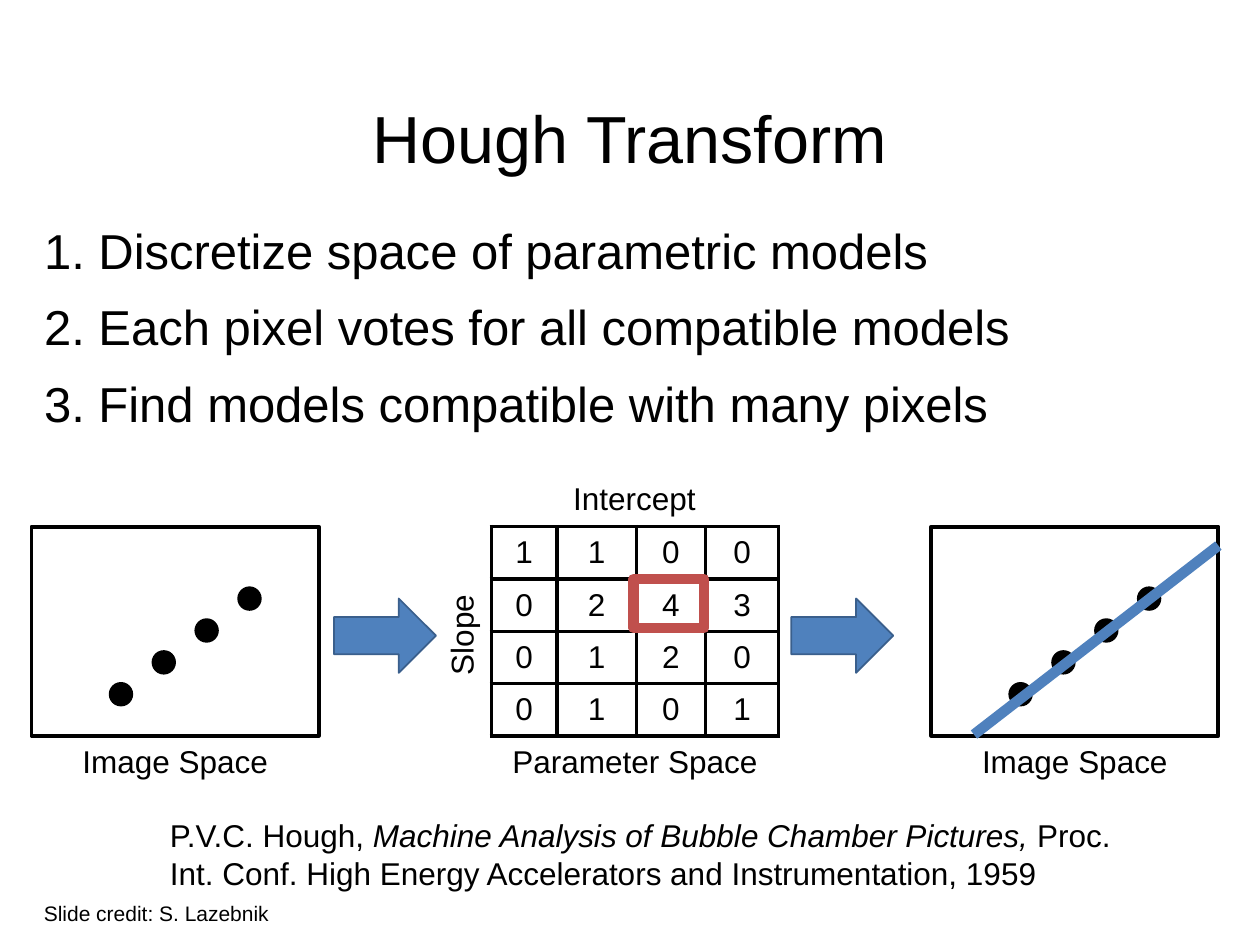
import pptx
import pptx.dml.color
import pptx.enum.shapes
import pptx.enum.text
import pptx.oxml
import pptx.oxml.ns
import pptx.util
from pptx.util import Inches

SHAPE = pptx.enum.shapes.MSO_SHAPE
ALIGN = pptx.enum.text.PP_ALIGN
ANCHOR = pptx.enum.text.MSO_ANCHOR
BLACK, WHITE, BLUE, DARK_BLUE, RED = "000000", "FFFFFF", "4F81BD", "3A5F8C", "C0504D"
PANEL_W, PANEL_H, PANEL_TOP = 2.28, 1.66, 4.18
VOTES = [[1, 1, 0, 0], [0, 2, 4, 3], [0, 1, 2, 0], [0, 1, 0, 1]]
COLUMN_WIDTHS = [0.52, 0.63, 0.55, 0.58]


def rgb(color):
    """Turn a hex string into a colour."""
    return pptx.dml.color.RGBColor.from_string(color)


def write(p, text, size=18, italic=False, align=ALIGN.LEFT):
    """Add a formatted run to a paragraph."""
    p.alignment = align
    r = p.add_run()
    r.text = text
    r.font.name = "Arial"
    r.font.size = pptx.util.Pt(size)
    r.font.italic = italic
    r.font.color.rgb = rgb(BLACK)


def place(sp, left, top, width, height):
    """Move and size a shape, in inches."""
    sp.left, sp.top = Inches(left), Inches(top)
    sp.width, sp.height = Inches(width), Inches(height)


def add_text(s, left, top, width, height, *runs, anchor=ANCHOR.TOP, **fmt):
    """Add a wrapping text box; each run is a (text, italic) pair."""
    sp = s.shapes.add_textbox(Inches(left), Inches(top), Inches(width), Inches(height))
    tf = sp.text_frame
    tf.word_wrap = True
    tf.vertical_anchor = anchor
    for text, italic in runs:
        write(tf.paragraphs[0], text, italic=italic, **fmt)
    return sp


def add_label(s, text, left, top, width):
    """Add a centred one-line label."""
    return add_text(s, left, top, width, 0.4, (text, False), align=ALIGN.CENTER)


def add_shape(s, kind, left, top, width, height, fill=None, line=BLACK, weight=1):
    """Add a preset shape without a shadow."""
    sp = s.shapes.add_shape(kind, Inches(left), Inches(top), Inches(width), Inches(height))
    sp.shadow.inherit = False
    if fill:
        sp.fill.solid()
        sp.fill.fore_color.rgb = rgb(fill)
    else:
        sp.fill.background()
    sp.line.color.rgb = rgb(line)
    sp.line.width = pptx.util.Pt(weight)
    return sp


def add_heading(s, left, top, width, height):
    """Fill the title placeholder."""
    sp = s.shapes.title
    place(sp, left, top, width, height)
    sp.text_frame.vertical_anchor = ANCHOR.MIDDLE
    p = sp.text_frame.paragraphs[0]
    p.line_spacing = 0.9
    write(p, "Hough Transform", size=38, align=ALIGN.CENTER)


def add_steps(s, left, top, width, height):
    """Fill the body placeholder with the three steps."""
    sp = s.placeholders[1]
    place(sp, left, top, width, height)
    tf = sp.text_frame
    tf.auto_size = pptx.enum.text.MSO_AUTO_SIZE.NONE
    steps = ["1. Discretize space of parametric models",
             "2. Each pixel votes for all compatible models",
             "3. Find models compatible with many pixels"]
    for i, step in enumerate(steps):
        p = tf.add_paragraph() if i else tf.paragraphs[0]
        p.space_before = pptx.util.Pt(0)
        p.space_after = pptx.util.Pt(10)
        write(p, step, size=28)
        pPr = p._p.get_or_add_pPr()
        pPr.set("marL", "0")
        pPr.set("indent", "0")
        pPr.append(pptx.oxml.parse_xml(f"<a:buNone {pptx.oxml.ns.nsdecls('a')}/>"))


def add_image_space(s, left, top, fitted=False):
    """Draw the pixel panel, with the fitted line if asked."""
    add_shape(s, SHAPE.RECTANGLE, left, top, PANEL_W, PANEL_H, weight=2.25)
    for i in range(4):
        add_shape(s, SHAPE.OVAL, left + 0.62 + 0.34 * i, top + 1.24 - 0.253 * i,
                  0.18, 0.18, fill=BLACK)
    add_label(s, "Image Space", left, top + PANEL_H, PANEL_W)
    if fitted:
        c = s.shapes.add_connector(
            pptx.enum.shapes.MSO_CONNECTOR.STRAIGHT, Inches(left + 0.34),
            Inches(top + 1.65), Inches(left + PANEL_W), Inches(top + 0.15))
        c.line.color.rgb = rgb(BLUE)
        c.line.width = pptx.util.Pt(6)
        pptx.oxml.ns.qn("a:effectLst")
        c._element.spPr.append(
            pptx.oxml.parse_xml(f"<a:effectLst {pptx.oxml.ns.nsdecls('a')}/>"))


def format_cell(cell, text):
    """Write a vote count in a white cell with black borders."""
    cell.margin_left = cell.margin_right = cell.margin_top = cell.margin_bottom = 0
    cell.vertical_anchor = ANCHOR.MIDDLE
    write(cell.text_frame.paragraphs[0], text, align=ALIGN.CENTER)
    tcPr = cell._tc.get_or_add_tcPr()
    for side in ("lnL", "lnR", "lnT", "lnB"):
        tcPr.append(pptx.oxml.parse_xml(
            f'<a:{side} {pptx.oxml.ns.nsdecls("a")} w="{pptx.util.Pt(2.25)}"><a:solidFill>'
            f'<a:srgbClr val="{BLACK}"/></a:solidFill></a:{side}>'))
    cell.fill.solid()
    cell.fill.fore_color.rgb = rgb(WHITE)


def add_parameter_space(s, left, top):
    """Draw the table of votes, its labels and the frame on the winner."""
    row_h = PANEL_H / len(VOTES)
    table = s.shapes.add_table(len(VOTES), len(COLUMN_WIDTHS), Inches(left), Inches(top),
                               Inches(PANEL_W), Inches(PANEL_H)).table
    table.first_row = table.horz_banding = False
    for column, width in zip(table.columns, COLUMN_WIDTHS):
        column.width = Inches(width)
    for i, votes in enumerate(VOTES):
        table.rows[i].height = Inches(row_h)
        for j, vote in enumerate(votes):
            format_cell(table.cell(i, j), str(vote))
    add_shape(s, SHAPE.RECTANGLE, left + sum(COLUMN_WIDTHS[:2]) - 0.02, top + row_h,
              0.56, 0.39, line=RED, weight=6)
    add_label(s, "Parameter Space", left, top + PANEL_H, PANEL_W)
    add_label(s, "Intercept", left + 0.39, top - 0.43, 1.49)
    add_label(s, "Slope", left - 0.8, top + 0.66, 1.12).rotation = 270


def add_arrow(s, left, top):
    """Draw a block arrow between two panels."""
    add_shape(s, SHAPE.RIGHT_ARROW, left, top, 0.81, 0.59, fill=BLUE, line=DARK_BLUE)


def add_sources(s, left, top):
    """Add the citation and the slide credit."""
    add_text(s, left + 1, top, 7.8, 0.7, ("P.V.C. Hough, ", False),
             ("Machine Analysis of Bubble Chamber Pictures,", True),
             (" Proc. Int. Conf. High Energy Accelerators and Instrumentation, 1959", False),
             anchor=ANCHOR.MIDDLE)
    add_text(s, left, top + 0.67, 3.33, 0.3, ("Slide credit: S. Lazebnik", False), size=12)


def main():
    """Build the slide and save it."""
    prs = pptx.Presentation()
    prs.slide_width, prs.slide_height = Inches(10), Inches(7.5)
    s = prs.slides.add_slide(prs.slide_layouts[1])
    add_heading(s, 0.69, 0.4, 8.62, 1.45)
    add_steps(s, 0.25, 1.7, 9.42, 1.75)
    add_image_space(s, 0.25, PANEL_TOP)
    add_arrow(s, 2.65, 4.75)
    add_parameter_space(s, 3.9, PANEL_TOP)
    add_arrow(s, 6.28, 4.75)
    add_image_space(s, 7.39, PANEL_TOP, fitted=True)
    add_sources(s, 0.25, 6.43)
    prs.save("out.pptx")


if __name__ == "__main__":
    main()
